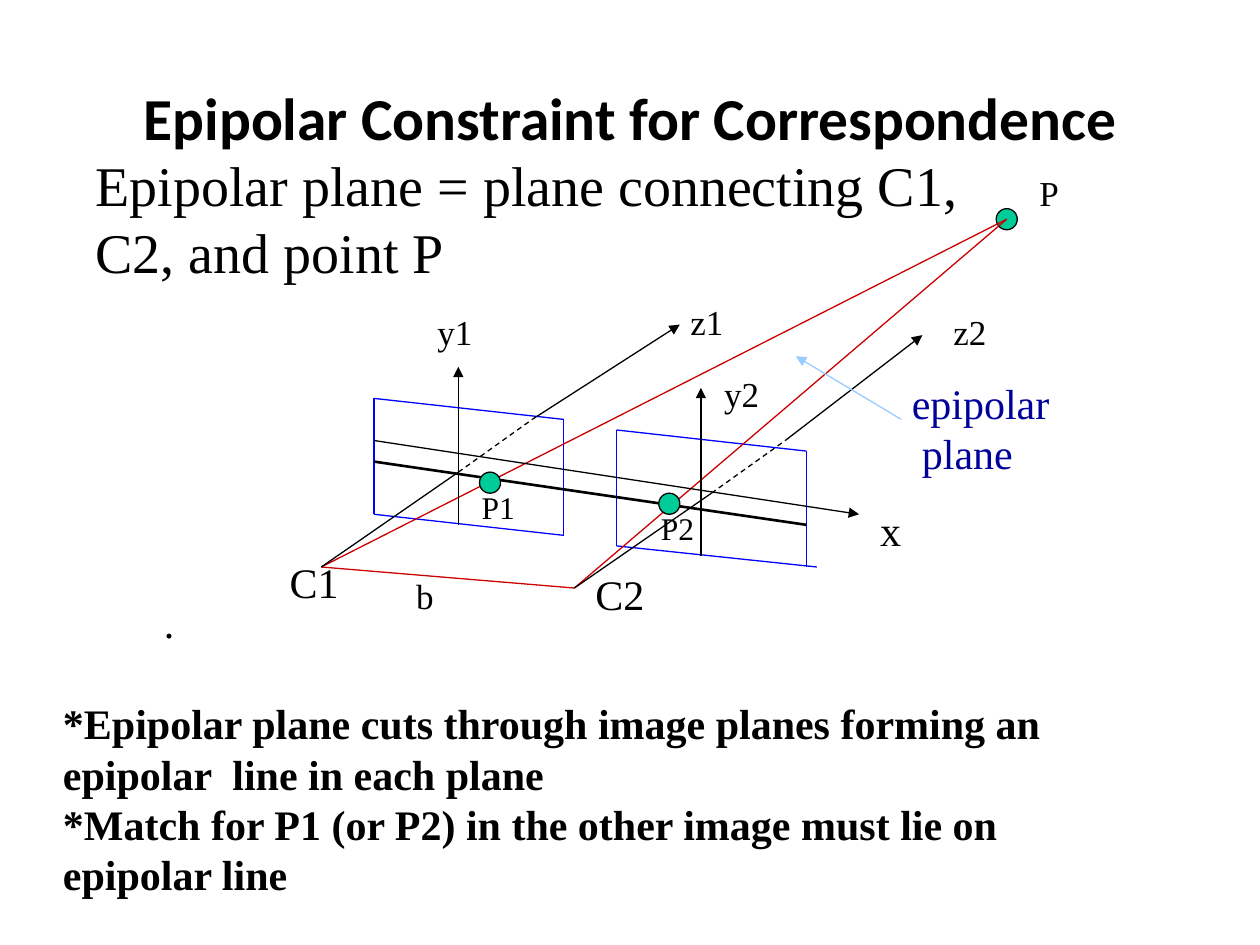
from pptx import Presentation
from pptx.dml.color import RGBColor
from pptx.enum.dml import MSO_LINE
from pptx.enum.shapes import MSO_CONNECTOR, MSO_SHAPE
from pptx.enum.text import MSO_ANCHOR, PP_ALIGN
from pptx.oxml.ns import qn
from pptx.util import Inches, Pt
from lxml.etree import SubElement

BLACK = RGBColor(0x00, 0x00, 0x00)
PLANE_BLUE = RGBColor(0x00, 0x00, 0xFF)
RAY_RED = RGBColor(0xCC, 0x00, 0x00)
POINT_GREEN = RGBColor(0x00, 0xCC, 0x99)
NOTE_BLUE = RGBColor(0x00, 0x00, 0x9A)
POINTER_BLUE = RGBColor(0x99, 0xCC, 0xFF)


def write(paragraph, text, size=20, font="Times New Roman", color=BLACK, bold=False,
          align=PP_ALIGN.LEFT, indent=0, before=0):
    paragraph.alignment = align
    paragraph.line_spacing = Pt(size * 1.2)
    paragraph.space_before = Pt(before)
    if indent:
        paragraph._p.get_or_add_pPr().set("marL", str(Inches(indent)))
    run = paragraph.add_run()
    run.text = text
    run.font.size = Pt(size)
    run.font.name = font
    run.font.bold = bold
    run.font.color.rgb = color


class Diagram:
    left, top = 2.55, 1.74
    column, row = 5.44 / 65, 2.76 / 33
    line_width = 0.75

    def __init__(self, slide):
        self.shapes = slide.shapes

    def place(self, col, row):
        return Inches(self.left + col * self.column), Inches(self.top + row * self.row)

    def line(self, start, end, color=BLACK, width=line_width, dashed=False, arrow=False):
        connector = self.shapes.add_connector(
            MSO_CONNECTOR.STRAIGHT, *self.place(*start), *self.place(*end))
        connector.line.color.rgb = color
        connector.line.width = Pt(width)
        if dashed:
            connector.line.dash_style = MSO_LINE.DASH
        if arrow:
            SubElement(connector.line._get_or_add_ln(), qn("a:tailEnd"), type="triangle")
        SubElement(connector._element.spPr, qn("a:effectLst"))

    def point(self, col, row):
        dot = self.shapes.add_shape(
            MSO_SHAPE.OVAL, *self.place(col - 1, row - 1),
            Inches(2 * self.column), Inches(2 * self.row))
        dot.shadow.inherit = False
        dot.fill.solid()
        dot.fill.fore_color.rgb = POINT_GREEN
        dot.line.color.rgb = BLACK
        dot.line.width = Pt(self.line_width)

    def text(self, col, row, cols, rows, paragraphs, anchor=MSO_ANCHOR.TOP):
        box = self.shapes.add_textbox(
            *self.place(col, row), Inches(cols * self.column), Inches(rows * self.row))
        frame = box.text_frame
        frame.word_wrap = True
        frame.vertical_anchor = anchor
        frame.margin_left = frame.margin_right = frame.margin_top = frame.margin_bottom = 0
        for index, (words, style) in enumerate(paragraphs):
            paragraph = frame.add_paragraph() if index else frame.paragraphs[0]
            write(paragraph, words, **style)

    def label(self, col, row, words, size=20):
        self.text(col, row, size / 4, size / 5, [(words, dict(size=size))])

    def image_plane(self, col, row, overhang=0):
        right, lower = col + 18, row + 2
        self.line((col, row), (col, row + 11), PLANE_BLUE)
        self.line((col, row), (right, lower), PLANE_BLUE)
        self.line((right, lower), (right, lower + 11), PLANE_BLUE)
        self.line((col, row + 11), (right + overhang, lower + 11), PLANE_BLUE)

    def optical_axis(self, center, tip):
        col, row = center
        entry, leave = (col + 13, row - 9), (col + 20, row - 14)
        self.line(center, entry)
        self.line(entry, leave, dashed=True)
        self.line(leave, tip, arrow=True)


def main():
    deck = Presentation()
    deck.slide_width, deck.slide_height = Inches(10), Inches(7.5)
    diagram = Diagram(deck.slides.add_slide(deck.slide_layouts[6]))

    diagram.text(-24.5, -13.1, 107.6, 6.8, [
        ("Epipolar Constraint for Correspondence",
         dict(size=34, font="Calibri", bold=True, align=PP_ALIGN.CENTER)),
    ], anchor=MSO_ANCHOR.MIDDLE)

    world, camera1, camera2 = (65, 0), (0, 33), (24, 35)
    diagram.image_plane(5, 17)
    diagram.image_plane(28, 20, overhang=1)
    diagram.point(*world)
    for start, end in ((world, camera1), (world, camera2), (camera1, camera2)):
        diagram.line(start, end, RAY_RED)
    diagram.line((5, 21), (51, 28), arrow=True)
    diagram.line((5, 23), (46, 29), width=1.5)
    diagram.optical_axis(camera1, (34, 10))
    diagram.point(16, 25)
    diagram.point(33, 27)
    diagram.line((13, 29), (13, 14), arrow=True)
    diagram.line((36, 32), (36, 16), arrow=True)
    diagram.optical_axis(camera2, (57, 11))

    for col, row, words, size in (
        (53, 27.1, "x", 24), (11, 8.7, "y1", 20), (38.2, 14.5, "y2", 20),
        (35, 7.7, "z1", 20), (-3, 32, "C1", 24), (26, 33.1, "C2", 24),
        (9, 33.7, "b", 20), (15.2, 25.5, "P1", 18), (32.2, 27.5, "P2", 18),
        (68.1, -4.5, "P", 20),
    ):
        diagram.label(col, row, words, size)

    note = dict(size=24, color=NOTE_BLUE)
    diagram.text(56, 8.7, 13.4, 16, [
        ("z2", dict(indent=0.33)),
        ("epipolar", dict(note, before=14)),
        ("plane", dict(note, indent=0.08)),
    ])
    diagram.line((55, 19), (45, 13), POINTER_BLUE, arrow=True)

    diagram.text(-21.4, -6.5, 87.6, 13, [
        ("Epipolar plane = plane connecting C1, C2, and point P", dict(size=32))])
    conclusion = dict(size=24, bold=True)
    diagram.text(-24.5, 35.8, 103.4, 29, [
        (".", dict(size=24, indent=0.8)),
        ("*Epipolar plane cuts through image planes forming an epipolar  line in each plane",
         dict(conclusion, before=29)),
        ("*Match for P1 (or P2) in the other image must lie on epipolar line", conclusion),
    ])
    deck.save("out.pptx")


if __name__ == "__main__":
    main()
